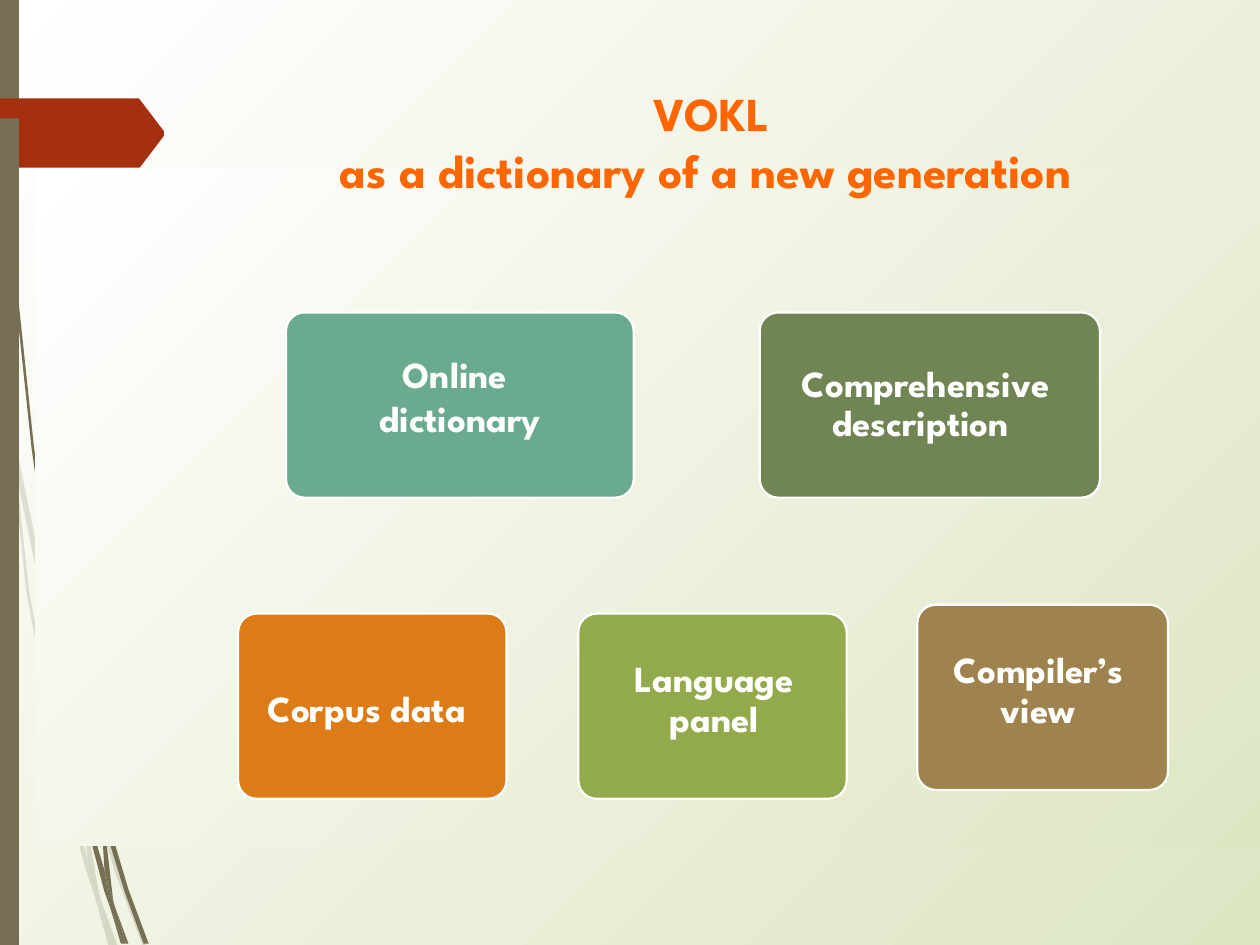
from dataclasses import dataclass
from lxml import etree
from pptx import Presentation
from pptx import util as u
from pptx.dml.color import RGBColor
from pptx.enum import shapes, text
from pptx.oxml.ns import qn


@dataclass
class Theme:
    font: str = "League Spartan"
    title_size: float = 27
    card_size: float = 21
    title: str = "FF6600"
    white: str = "FFFFFF"
    pale: str = "DDE6C3"
    stem: str = "766F54"
    flag: str = "A53010"


theme = Theme()
deck = Presentation()
deck.slide_width, deck.slide_height = u.Inches(10), u.Inches(7.5)
cell = deck.slide_width // 1000
page = deck.slides.add_slide(deck.slide_layouts[5])


def paint(shape, color, outline=None):
    shape.shadow.inherit = False
    shape.fill.solid()
    shape.fill.fore_color.rgb = RGBColor.from_string(color)
    if outline:
        shape.line.color.rgb = RGBColor.from_string(outline)
        shape.line.width = u.Pt(1.25)
    else:
        shape.line.fill.background()
    return shape


def write(frame, lines, size, color, spacing, insets):
    frame.word_wrap = True
    frame.auto_size = text.MSO_AUTO_SIZE.NONE
    frame.margin_left, frame.margin_top, frame.margin_right, frame.margin_bottom = (
        cell * inset for inset in insets)
    for number, line in enumerate(lines):
        para = frame.add_paragraph() if number else frame.paragraphs[0]
        para.alignment = text.PP_ALIGN.CENTER
        para.line_spacing = spacing
        para.space_before = u.Pt(0)
        span = para.add_run()
        span.text = line
        span.font.name, span.font.size, span.font.bold = theme.font, u.Pt(size), True
        span.font.color.rgb = RGBColor.from_string(color)


pale_stems = [
    [(43, 522), (63, 599), (64, 586), (47, 520), (11, 345), (13, 376)],
    [(69, 607), (66, 596), (66, 610), (92, 694), (113, 750), (116, 750), (95, 692)],
    [(89, 750), (93, 750), (79, 711)],
    [(70, 683), (52, 619), (23, 469), (13, 376), (8, 350), (21, 470), (49, 621),
     (69, 693), (76, 714), (74, 707)],
    [(63, 599), (65, 646), (70, 683), (72, 692), (79, 711), (78, 706), (68, 646),
     (66, 610)],
    [(76, 714), (86, 750), (89, 750)],
    [(72, 692), (70, 683), (74, 707), (76, 714), (89, 750), (79, 711)],
]
dark_stems = [
    [(5, 110), (12, 233), (25, 355), (42, 477), (43, 481), (41, 453), (27, 355),
     (14, 232), (6, 109), (3, 48), (3, 0), (2, 0), (3, 48)],
    [(85, 649), (83, 641), (83, 656), (99, 708), (114, 749), (118, 749), (102, 706)],
    [(83, 691), (73, 657), (54, 556), (48, 505), (43, 477), (51, 557), (70, 659),
     (83, 708), (88, 722), (87, 717)],
    [(100, 749), (102, 749), (91, 719)],
    [(88, 722), (96, 749), (98, 749)],
    [(80, 645), (83, 691), (87, 706), (91, 719), (90, 716), (83, 656)],
    [(87, 706), (83, 691), (87, 717), (88, 722), (98, 749), (100, 749), (91, 719)],
]
flag = [(130, 108), (111, 133), (110, 133), (0, 133), (0, 78), (110, 78), (111, 79),
        (130, 104), (130, 106)]

outlines = [(stem, theme.stem, 20) for stem in pale_stems]
outlines += [(stem, theme.stem, 100) for stem in dark_stems]
outlines.append((flag, theme.flag, 100))
for points, color, opacity in outlines:
    if points is flag:
        bar = page.shapes.add_shape(
            shapes.MSO_SHAPE.RECTANGLE, 0, 0, cell * 15, cell * 750)
        paint(bar, theme.stem)
    builder = page.shapes.build_freeform(*points[0], scale=cell)
    builder.add_line_segments(points[1:], close=True)
    outline = paint(builder.convert_to_shape(), color)
    if opacity < 100:
        tint = next(outline.element.iter(qn("a:srgbClr")))
        etree.SubElement(tint, qn("a:alpha")).set("val", str(opacity * 1000))

panel = page.shapes.add_shape(
    shapes.MSO_SHAPE.RECTANGLE, cell * 28, cell * 134, cell * 986, cell * 537)
paint(panel, theme.white)
for fill in (page.background.fill, panel.fill):
    fill.gradient()
    for stop, color in zip(fill.gradient_stops, (theme.white, theme.pale)):
        stop.color.rgb = RGBColor.from_string(color)
for gradient in page.element.iter(qn("a:gradFill")):
    gradient.remove(gradient.find(qn("a:lin")))
    circle = etree.SubElement(gradient, qn("a:path"))
    circle.set("path", "circle")
    focus = etree.SubElement(circle, qn("a:fillToRect"))
    focus.set("r", "100000")
    focus.set("b", "100000")

lower_bar = page.shapes.add_shape(
    shapes.MSO_SHAPE.RECTANGLE, 0, cell * 94, cell * 15, cell * 562)
paint(lower_bar, theme.stem)

card_height = 147
cards = [
    (["Corpus data"], 189, 487, 213, "DD7C16", 0.9, (12, 14, 21, 7)),
    (["Compiler’s view"], 728, 480, 199, "9F834F", 0.9, (6, 6, 13, 15)),
    (["Comprehensive", "description "], 603, 248, 270, "708553", 0.9, (6, 6, 13, 6)),
    (["Language panel"], 459, 487, 213, "92AA4C", 0.9, (18, 6, 15, 15)),
    (["Online ", "dictionary"], 227, 248, 276, "6AAA8F", 1, (7, 7, 7, 22)),
]
for lines, left, top, width, color, spacing, insets in cards:
    card = page.shapes.add_shape(
        shapes.MSO_SHAPE.ROUNDED_RECTANGLE,
        cell * left, cell * top, cell * width, cell * card_height)
    card.adjustments[0] = 0.1
    paint(card, color, theme.white)
    card.text_frame.vertical_anchor = text.MSO_ANCHOR.MIDDLE
    write(card.text_frame, lines, theme.card_size, theme.white, spacing, insets)

title = page.shapes.title
title.left, title.top, title.width, title.height = (
    cell * 170, cell * 63, cell * 790, cell * 98)
title.text_frame.vertical_anchor = text.MSO_ANCHOR.TOP
write(title.text_frame, ["VOKL", "as a dictionary of a new generation "],
      theme.title_size, theme.title, 1, (7, 4, 7, 4))
title.element.getparent().append(title.element)

deck.save("out.pptx")
